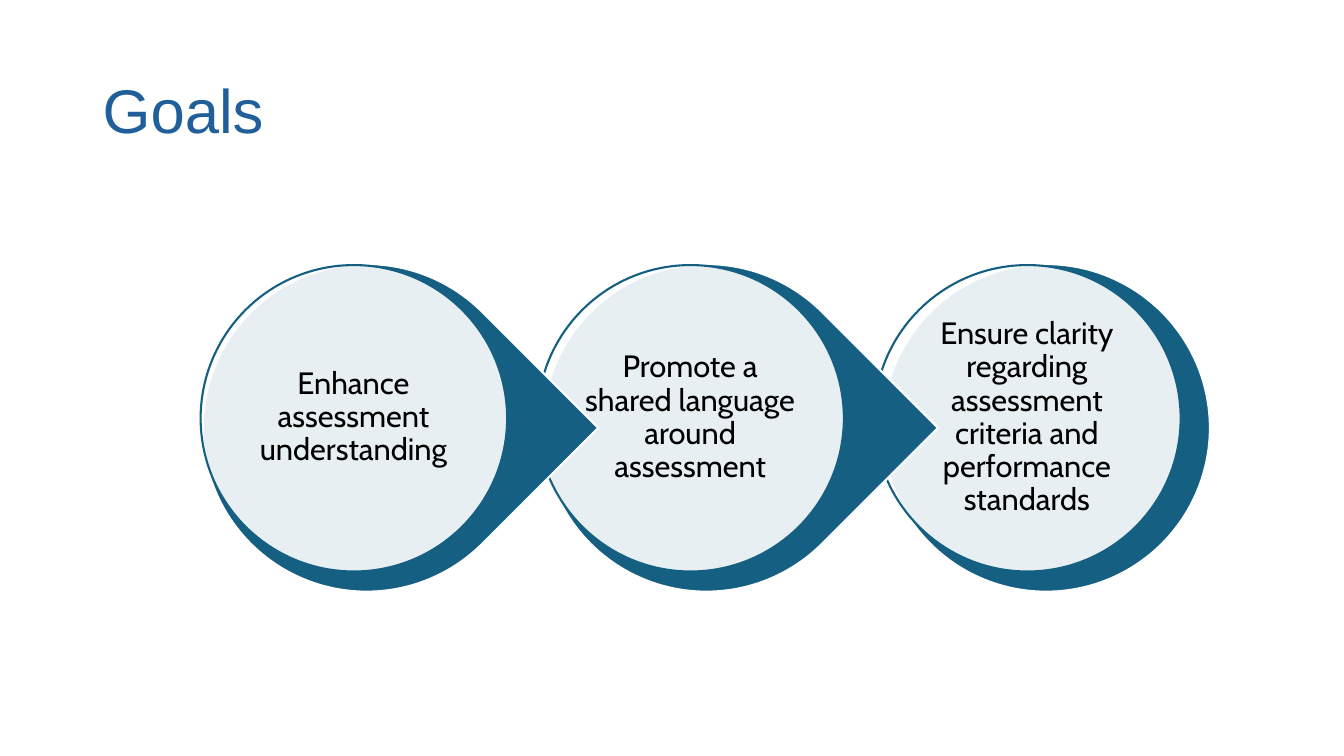
from lxml.etree import SubElement
from pptx import Presentation
from pptx.dml.color import RGBColor
from pptx.enum.shapes import MSO_SHAPE
from pptx.enum.text import MSO_ANCHOR, PP_ALIGN
from pptx.oxml.ns import qn
from pptx.util import Emu, Pt

BLUE, WHITE = "156082", "FFFFFF"
GOALS = [
    "Enhance assessment understanding",
    "Promote a shared language around assessment",
    "Ensure clarity regarding assessment criteria and performance standards",
]


def px(n):
    """Turn px, 100 to the inch, into EMU."""
    return Emu(n * 9144)


def color(code):
    return RGBColor.from_string(code)


class Deck:
    """Holds the text style and the current slide."""

    font = "Cabin"
    size = 22

    def __init__(self, wide, high):
        self.file = Presentation()
        self.file.slide_width, self.file.slide_height = px(wide), px(high)
        self.slide = self.file.slides.add_slide(self.file.slide_layouts[6])

    def shape(self, kind, x, y, w, h, fill, line, alpha=100, turn=0):
        item = self.slide.shapes.add_shape(kind, px(x), px(y), px(w), px(h))
        item.shadow.inherit = False
        item.rotation = turn
        item.fill.solid()
        item.fill.fore_color.rgb = color(fill)
        item.line.color.rgb = color(line)
        item.line.width = Pt(1.5)
        if alpha < 100:
            tint = item._element.spPr.find(qn("a:solidFill"))[0]
            SubElement(tint, qn("a:alpha"), val=str(alpha * 1000))

    def text(self, words, x, y, w, h, font=None, size=None, ink="000000",
             align=PP_ALIGN.CENTER, pad=3):
        box = self.slide.shapes.add_textbox(px(x), px(y), px(w), px(h))
        frame = box.text_frame
        frame.word_wrap = True
        frame.vertical_anchor = MSO_ANCHOR.MIDDLE
        frame.margin_left = frame.margin_right = px(pad)
        frame.margin_top = frame.margin_bottom = px(3)
        para = frame.paragraphs[0]
        para.alignment = align
        para.line_spacing = 0.9
        run = para.add_run()
        run.text = words
        run.font.name = font or self.font
        run.font.size = Pt(size or self.size)
        run.font.color.rgb = color(ink)


def main():
    deck = Deck(1333, 750)
    deck.text("Goals", 92, 40, 1150, 145, font="Arial", size=44,
              ink="215F9A", align=PP_ALIGN.LEFT, pad=10)

    # Right to left, so that each drop's tip covers the next disc
    last = len(GOALS) - 1
    for i in range(last, -1, -1):
        kind = MSO_SHAPE.OVAL if i == last else MSO_SHAPE.TEAR
        turn = 0 if i == last else 45
        left = 199 + 334 * i
        deck.shape(kind, 201 + 337 * i, 262, 325, 325, BLUE, WHITE, turn=turn)
        deck.shape(MSO_SHAPE.OVAL, left, 263, 304, 304, WHITE, BLUE, alpha=90)
        deck.text(GOALS[i], left + 43, 306, 217, 217)

    deck.file.save("out.pptx")


if __name__ == "__main__":
    main()
